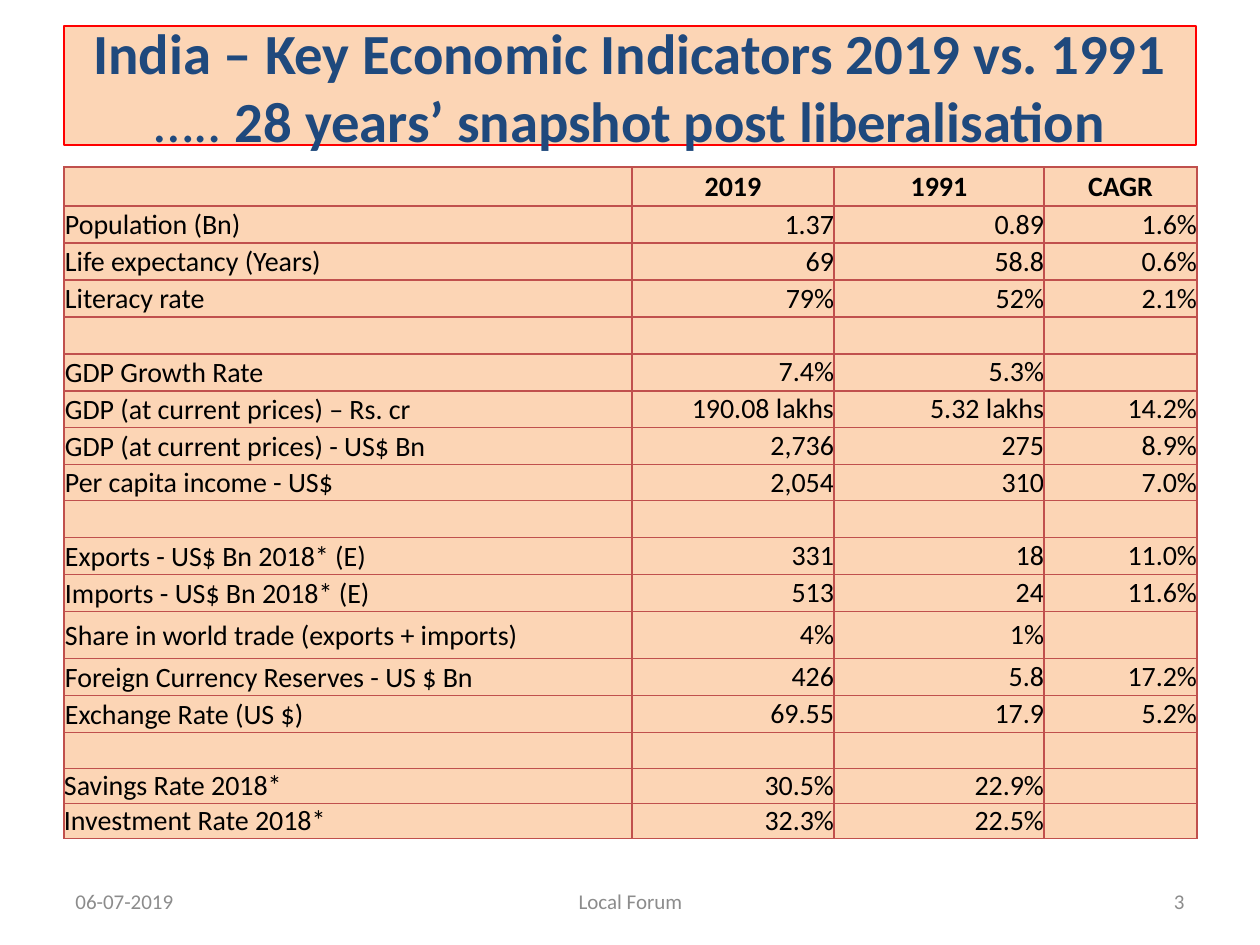
from lxml.etree import SubElement
from pptx import Presentation
from pptx.dml.color import RGBColor
from pptx.enum.text import MSO_ANCHOR, MSO_AUTO_SIZE, PP_ALIGN
from pptx.oxml.ns import qn
from pptx.util import Emu, Pt

PEACH = RGBColor(0xFC, 0xD5, 0xB5)
RED = RGBColor(0xFF, 0x00, 0x00)
BRICK = RGBColor(0xC0, 0x50, 0x4D)
NAVY = RGBColor(0x1F, 0x49, 0x7D)
GREY = RGBColor(0x8C, 0x8C, 0x8C)
BLACK = RGBColor(0x00, 0x00, 0x00)
FONT = "Calibri"
LEFT, CENTER, RIGHT = PP_ALIGN.LEFT, PP_ALIGN.CENTER, PP_ALIGN.RIGHT

COLS = [568, 202, 210, 153]
ROWS = [39] + [37] * 7 + [36] + [37] * 3 + [47] + [37, 37, 36] + [35] * 2
DATA = [
    ("", "2019", "1991", "CAGR"),
    ("Population (Bn)", "1.37", "0.89", "1.6%"),
    ("Life expectancy (Years)", "69", "58.8", "0.6%"),
    ("Literacy rate", "79%", "52%", "2.1%"),
    ("", "", "", ""),
    ("GDP Growth Rate", "7.4%", "5.3%", ""),
    ("GDP (at current prices) – Rs. cr", "190.08 lakhs", "5.32 lakhs", "14.2%"),
    ("GDP (at current prices) - US$ Bn", "2,736", "275", "8.9%"),
    ("Per capita income - US$", "2,054", "310", "7.0%"),
    ("", "", "", ""),
    ("Exports - US$ Bn 2018* (E)", "331", "18", "11.0%"),
    ("Imports - US$ Bn 2018* (E)", "513", "24", "11.6%"),
    ("Share in world trade (exports + imports)", "4%", "1%", ""),
    ("Foreign Currency Reserves - US $ Bn", "426", "5.8", "17.2%"),
    ("Exchange Rate (US $)", "69.55", "17.9", "5.2%"),
    ("", "", "", ""),
    ("Savings Rate 2018*", "30.5%", "22.9%", ""),
    ("Investment Rate 2018*", "32.3%", "22.5%", ""),
]


def px(n):
    return Emu(round(n * 914400 / 126))


def style(font, size, color, bold=False):
    font.name = FONT
    font.size = Pt(size)
    font.bold = bold
    font.color.rgb = color


def add_title(slide):
    box = slide.shapes.title
    box.left, box.top, box.width, box.height = px(64), px(26), px(1132), px(119)
    box.fill.solid()
    box.fill.fore_color.rgb = PEACH
    box.line.color.rgb = RED
    box.line.width = Pt(0.75)
    frame = box.text_frame
    frame.auto_size = MSO_AUTO_SIZE.NONE
    frame.word_wrap = True
    frame.vertical_anchor = MSO_ANCHOR.MIDDLE
    para = frame.paragraphs[0]
    para.alignment = CENTER
    parts = [
        ("India – Key Economic Indicators 2019 vs. 1991", True),
        ("….. ", False),
        ("28 years’ snapshot post liberalisation", True),
    ]
    for i, (text, bold) in enumerate(parts):
        if i == 1:
            para.add_line_break()
        run = para.add_run()
        run.text = text
        style(run.font, 32.4, NAVY, bold)


def add_note(slide, left, width, text, align):
    box = slide.shapes.add_textbox(px(left), px(876), px(width), px(50))
    frame = box.text_frame
    frame.word_wrap = True
    frame.vertical_anchor = MSO_ANCHOR.MIDDLE
    para = frame.paragraphs[0]
    para.text = text
    para.alignment = align
    style(para.font, 12, GREY)


def add_edges(cell):
    props = cell._tc.get_or_add_tcPr()
    for side in ("a:lnL", "a:lnR", "a:lnT", "a:lnB"):
        line = SubElement(props, qn(side), w=str(Pt(1)))
        fill = SubElement(line, qn("a:solidFill"))
        SubElement(fill, qn("a:srgbClr"), val=str(BRICK))


def fill_cell(cell, text, align, bold, inset):
    add_edges(cell)
    cell.fill.solid()
    cell.fill.fore_color.rgb = PEACH
    cell.margin_left = cell.margin_right = cell.margin_top = px(inset)
    cell.margin_bottom = 0
    cell.vertical_anchor = MSO_ANCHOR.MIDDLE
    para = cell.text_frame.paragraphs[0]
    para.text = text
    para.alignment = align
    style(para.font, 16, BLACK, bold)
    if not text:
        SubElement(para._p, qn("a:endParaRPr"), sz="1600")


def add_grid(slide):
    frame = slide.shapes.add_table(
        len(ROWS), len(COLS), px(64), px(167), px(sum(COLS)), px(sum(ROWS)))
    table = frame.table
    for col, width in zip(table.columns, COLS):
        col.width = px(width)
    for row, high in zip(table.rows, ROWS):
        row.height = px(high)
    for r, line in enumerate(DATA):
        for c, text in enumerate(line):
            align = LEFT if c == 0 else CENTER if r == 0 else RIGHT
            inset = 1 if c == 0 and r < 16 else 0
            fill_cell(table.cell(r, c), text, align, r == 0, inset)


def main():
    deck = Presentation()
    deck.slide_width, deck.slide_height = px(1260), px(945)
    slide = deck.slides.add_slide(deck.slide_layouts[5])
    add_title(slide)
    add_note(slide, 903, 294, "3", RIGHT)
    add_note(slide, 431, 399, "Local Forum", CENTER)
    add_note(slide, 63, 294, "06-07-2019", LEFT)
    add_grid(slide)
    deck.save("out.pptx")


if __name__ == "__main__":
    main()
